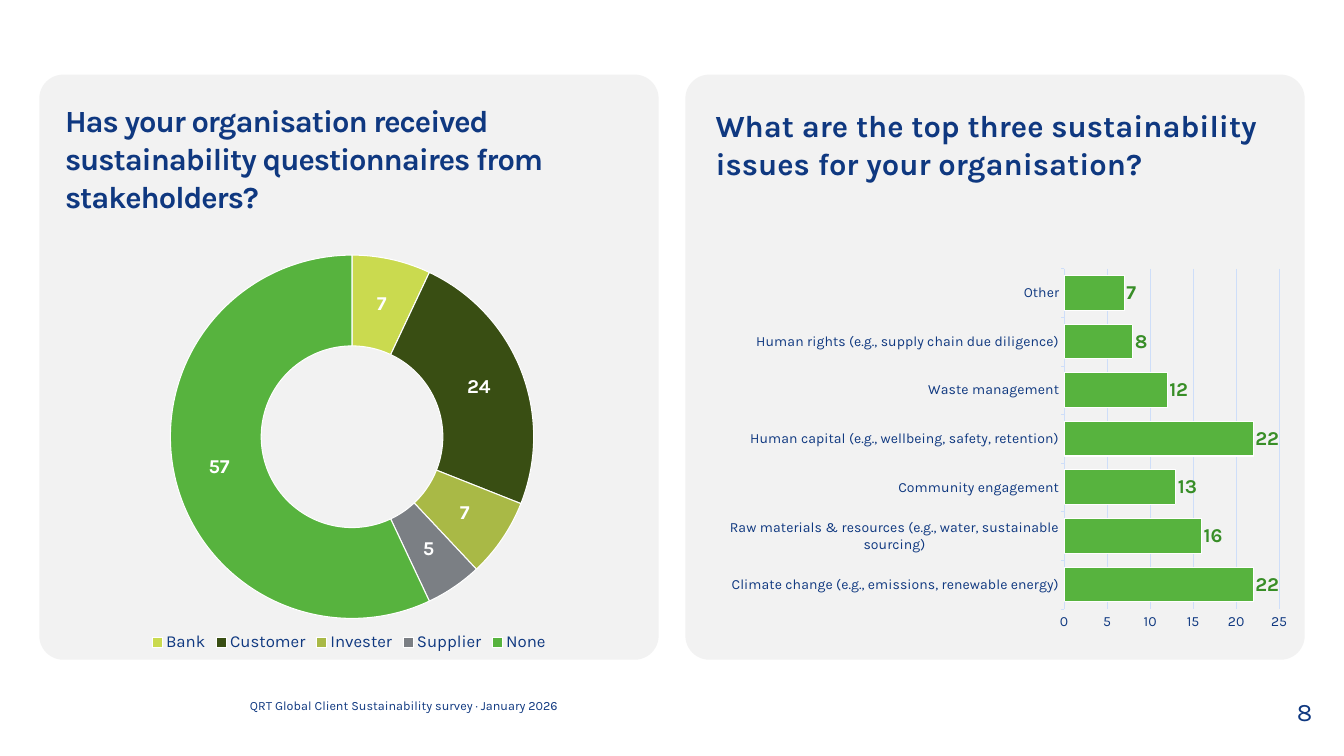
from dataclasses import dataclass

from lxml import etree
from pptx import Presentation
from pptx.chart.data import CategoryChartData
from pptx.dml.color import RGBColor
from pptx.enum.chart import XL_CHART_TYPE, XL_LABEL_POSITION, XL_LEGEND_POSITION, XL_TICK_MARK
from pptx.enum.shapes import MSO_SHAPE
from pptx.enum.text import PP_ALIGN
from pptx.oxml.ns import qn
from pptx.util import Inches, Pt

NAVY = RGBColor(0x0F, 0x38, 0x80)
WHITE = RGBColor(0xFF, 0xFF, 0xFF)
PANEL_GREY = RGBColor(0xF2, 0xF2, 0xF2)
GRID_BLUE = RGBColor(0xCE, 0xDE, 0xF9)
GREEN = RGBColor(0x57, 0xB3, 0x3E)
LABEL_GREEN = RGBColor(0x38, 0x8E, 0x27)
LIME = RGBColor(0xCA, 0xDA, 0x4F)
FOREST = RGBColor(0x39, 0x4E, 0x13)
OLIVE = RGBColor(0xA9, 0xB9, 0x46)
GREY = RGBColor(0x7B, 0x7F, 0x84)

FONT = "Karla"
ROUNDED = MSO_SHAPE.ROUNDED_RECTANGLE
LEFT, CENTER = PP_ALIGN.LEFT, PP_ALIGN.CENTER
BAR, DOUGHNUT = XL_CHART_TYPE.BAR_CLUSTERED, XL_CHART_TYPE.DOUGHNUT
OUTSIDE_END = XL_LABEL_POSITION.OUTSIDE_END
LEGEND_BOTTOM = XL_LEGEND_POSITION.BOTTOM
TICK_OUTSIDE = XL_TICK_MARK.OUTSIDE


@dataclass
class Box:
    left: float
    top: float
    width: float
    height: float

    def inches(self):
        return [Inches(v) for v in (self.left, self.top, self.width, self.height)]


@dataclass
class Label:
    text: str
    box: Box
    size: int
    bold: bool = False
    line_spacing: float | None = None
    tracking: int = 0
    inset: tuple[float, float] = (0, 0)
    align: PP_ALIGN = LEFT


PANELS = [Box(left, 1.48, 12.29, 11.61) for left in (0.78, 13.6)]

LABELS = [
    Label("Has your organisation received sustainability questionnaires from stakeholders?",
          Box(1.29, 2, 10.78, 1.73), 44, True, 54, -150),
    Label("What are the top three sustainability issues for your organisation?",
          Box(14, 2, 11.73, 1.83), 44, True, 54, inset=(0.2, 0.1)),
    Label("QRT Global Client Sustainability survey · January 2026",
          Box(4.96, 13.84, 8.37, 0.37), 18),
    Label("8", Box(25.35, 13.82, 1.08, 0.37), 36, align=CENTER),
]

STAKEHOLDERS = {"Bank": 7, "Customer": 24, "Invester": 7, "Supplier": 5, "None": 57}
SLICE_COLORS = [LIME, FOREST, OLIVE, GREY, GREEN]

ISSUES = {
    "Climate change (e.g., emissions, renewable energy)": 22,
    "Raw materials & resources (e.g., water, sustainable sourcing)": 16,
    "Community engagement": 13,
    "Human capital (e.g., wellbeing, safety, retention)": 22,
    "Waste management": 12,
    "Human rights (e.g., supply chain due diligence)": 8,
    "Other": 7,
}


def set_font(font, size: int, color: RGBColor = NAVY, bold: bool = False) -> None:
    for name, value in {"name": FONT, "size": Pt(size), "bold": bold}.items():
        setattr(font, name, value)
    font.color.rgb = color


def add_panel(slide, box: Box) -> None:
    shape = slide.shapes.add_shape(ROUNDED, *box.inches())
    shape.shadow.inherit = False
    shape.adjustments[0] = 0.041
    shape.fill.solid()
    shape.fill.fore_color.rgb = PANEL_GREY
    shape.line.fill.background()


def add_label(slide, label: Label) -> None:
    frame = slide.shapes.add_textbox(*label.box.inches()).text_frame
    side, end = (Inches(v) for v in label.inset)
    settings = {"word_wrap": True, "margin_left": side, "margin_right": side,
                "margin_top": end, "margin_bottom": end}
    for name, value in settings.items():
        setattr(frame, name, value)
    paragraph = frame.paragraphs[0]
    paragraph.alignment = label.align
    if label.line_spacing:
        paragraph.line_spacing = Pt(label.line_spacing)
    run = paragraph.add_run()
    run.text = label.text
    set_font(run.font, label.size, bold=label.bold)
    if label.tracking:
        run.font._element.set("spc", str(label.tracking))


def set_plot_area(chart, area: Box) -> None:
    """Fix the inner plot area, as fractions of the chart."""
    plot_area = chart._chartSpace.find(".//" + qn("c:plotArea"))
    for old in plot_area.findall(qn("c:layout")):
        plot_area.remove(old)
    layout = etree.Element(qn("c:layout"))
    manual = etree.SubElement(layout, qn("c:manualLayout"))
    values = {"layoutTarget": "inner", "xMode": "edge", "yMode": "edge",
              "x": area.left, "y": area.top, "w": area.width, "h": area.height}
    for tag, value in values.items():
        etree.SubElement(manual, qn("c:" + tag)).set("val", str(value))
    plot_area.insert(0, layout)


def add_chart(slide, kind, box: Box, values: dict[str, int], area: Box,
              label_color: RGBColor):
    data = CategoryChartData()
    data.categories = list(values)
    data.add_series("Series 1", list(values.values()))
    chart = slide.shapes.add_chart(kind, *box.inches(), data).chart
    chart.has_title = False
    chart.has_legend = False
    set_font(chart.font, 20)
    set_plot_area(chart, area)
    plot = chart.plots[0]
    plot.has_data_labels = True
    plot.data_labels.show_value = True
    plot.data_labels.show_percentage = False
    set_font(plot.data_labels.font, 28, label_color, True)
    return chart


def add_stakeholder_chart(slide) -> None:
    chart = add_chart(slide, DOUGHNUT, Box(0.78, 4.9, 12.29, 8.1), STAKEHOLDERS,
                      Box(0.21, 0.02, 0.59, 0.89), WHITE)
    chart.has_legend = True
    chart.legend.position = LEGEND_BOTTOM
    chart.legend.include_in_layout = False
    set_font(chart.legend.font, 24)
    chart._chartSpace.find(".//" + qn("c:holeSize")).set("val", "70")
    for index, color in enumerate(SLICE_COLORS):
        slice_format = chart.plots[0].series[0].points[index].format
        slice_format.fill.solid()
        slice_format.fill.fore_color.rgb = color
        slice_format.line.color.rgb = WHITE
        slice_format.line.width = Pt(1.5)


def add_issue_chart(slide) -> None:
    chart = add_chart(slide, BAR, Box(14.2, 5.18, 11.53, 7.5), ISSUES,
                      Box(0.6, 0.02, 0.37, 0.9), LABEL_GREEN)
    plot = chart.plots[0]
    plot.gap_width = 40
    plot.vary_by_categories = False
    plot.data_labels.position = OUTSIDE_END
    bars = plot.series[0].format
    bars.fill.solid()
    bars.fill.fore_color.rgb = GREEN
    bars.line.color.rgb = WHITE
    bars.line.width = Pt(1.5)

    category_axis, value_axis = chart.category_axis, chart.value_axis
    for axis in (category_axis, value_axis):
        axis.major_tick_mark = TICK_OUTSIDE
        set_font(axis.tick_labels.font, 20)
    value_axis.minimum_scale, value_axis.maximum_scale, value_axis.major_unit = 0, 25, 5
    value_axis.has_major_gridlines = True
    value_axis.format.line.fill.background()
    for line in (category_axis.format.line, value_axis.major_gridlines.format.line):
        line.color.rgb = GRID_BLUE
        line.width = Pt(0.75)


def main() -> None:
    presentation = Presentation()
    presentation.slide_width, presentation.slide_height = Inches(26.67), Inches(15)
    slide = presentation.slides.add_slide(presentation.slide_layouts[6])
    # Background panels
    for panel in PANELS:
        add_panel(slide, panel)
    # Headings, footer and page number
    for label in LABELS:
        add_label(slide, label)
    # Survey results
    add_issue_chart(slide)
    add_stakeholder_chart(slide)
    presentation.save("out.pptx")


if __name__ == "__main__":
    main()
